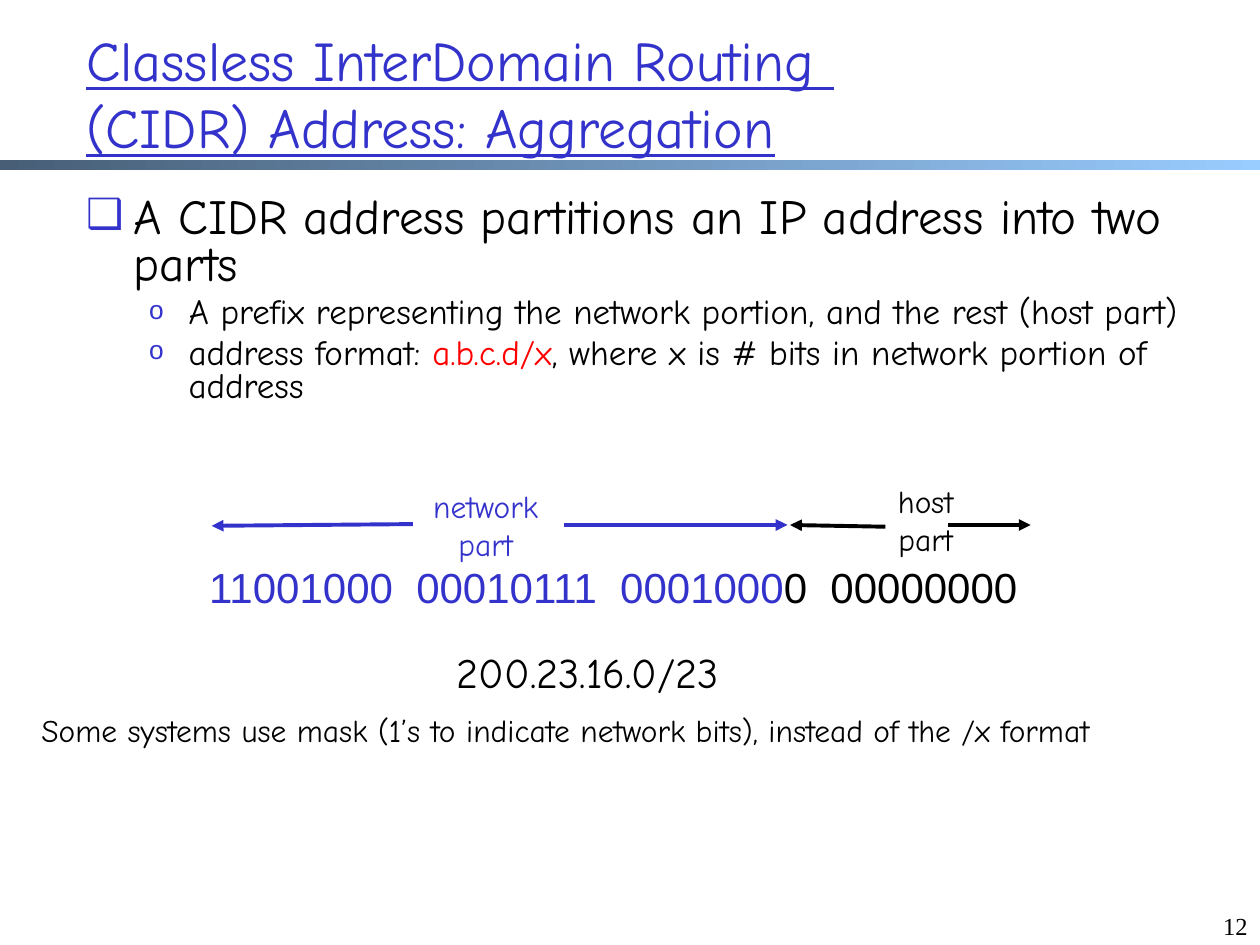
from lxml.etree import SubElement
from pptx import Presentation
from pptx.dml.color import RGBColor
from pptx.enum.shapes import MSO_CONNECTOR, MSO_SHAPE
from pptx.enum.text import MSO_ANCHOR, MSO_AUTO_SIZE, PP_ALIGN
from pptx.oxml.ns import qn
from pptx.util import Pt

COLOURS = {"blue": "3333CC", "black": "000000", "red": "FF0000",
           "bar_dark": "475E76", "bar_light": "99CCFF"}
BODY_FONT = "Comic Neue"
BULLETS = [
    {"char": "❑", "scale": 85, "size": 28, "left": 27, "hanging": 27, "before": 5.6},
    {"char": "o", "scale": 75, "size": 20, "left": 58.5, "hanging": 22.5, "before": 4},
]


def colour(name):
    return RGBColor.from_string(COLOURS[name])


def set_attributes(target, values):
    for name, value in values.items():
        setattr(target, name, value)


class SlideBuilder:
    """Holds the style and the current slide."""

    def __init__(self, slide):
        self.slide = slide
        self.shapes = slide.shapes

    def place(self, shape, left, top, width, height):
        set_attributes(shape, {"left": Pt(left), "top": Pt(top),
                               "width": Pt(width), "height": Pt(height)})

    def spans(self, para, parts, size, font=BODY_FONT, underline=None):
        """Add (text, colour name) parts; a newline becomes a line break."""
        for text, shade in parts:
            for number, line in enumerate(text.split("\n")):
                if number:
                    para.add_line_break()
                span = para.add_run()
                span.text = line
                set_attributes(span.font, {"size": Pt(size), "name": font,
                                           "underline": underline})
                span.font.color.rgb = colour(shade)

    def title(self, text, area):
        box = self.shapes.title
        self.place(box, *area)
        set_attributes(box.text_frame, {"vertical_anchor": MSO_ANCHOR.MIDDLE,
                                        "auto_size": MSO_AUTO_SIZE.NONE})
        para = box.text_frame.paragraphs[0]
        para.alignment = PP_ALIGN.LEFT
        self.spans(para, [(text, "blue")], 32, underline=True)

    def body(self, items, area):
        box = self.slide.placeholders[1]
        self.place(box, *area)
        frame = box.text_frame
        frame.auto_size = MSO_AUTO_SIZE.NONE
        for number, (level, parts) in enumerate(items):
            para = frame.add_paragraph() if number else frame.paragraphs[0]
            style = BULLETS[level]
            set_attributes(para, {"level": level, "line_spacing": 0.8,
                                  "space_before": Pt(style["before"])})
            self.bullet(para, style)
            self.spans(para, parts, style["size"])

    def bullet(self, para, style):
        props = para._p.get_or_add_pPr()
        props.set("marL", str(Pt(style["left"])))
        props.set("indent", str(-Pt(style["hanging"])))
        shade = SubElement(props, qn("a:buClr"))
        SubElement(shade, qn("a:srgbClr"), val=COLOURS["blue"])
        SubElement(props, qn("a:buSzPct"), val=str(style["scale"] * 1000))
        SubElement(props, qn("a:buFont"), typeface="Arial")
        SubElement(props, qn("a:buChar"), char=style["char"])

    def text(self, paragraphs, area, size, font=BODY_FONT, align=PP_ALIGN.LEFT):
        box = self.shapes.add_textbox(*(Pt(length) for length in area))
        frame = box.text_frame
        frame.word_wrap = False
        for number, parts in enumerate(paragraphs):
            para = frame.add_paragraph() if number else frame.paragraphs[0]
            para.alignment = align
            self.spans(para, parts, size, font)

    def arrow(self, start, end, shade):
        line = self.shapes.add_connector(
            MSO_CONNECTOR.STRAIGHT, *(Pt(length) for length in (*start, *end)))
        line.line.width = Pt(2.25)
        line.line.color.rgb = colour(shade)
        SubElement(line.line._get_or_add_ln(), qn("a:tailEnd"), type="triangle")
        SubElement(line._element.spPr, qn("a:effectLst"))

    def gradient_bar(self, area):
        bar = self.shapes.add_shape(MSO_SHAPE.RECTANGLE,
                                    *(Pt(length) for length in area))
        bar.shadow.inherit = False
        bar.line.fill.background()
        bar.fill.gradient()
        bar.fill.gradient_angle = 0
        ends = (("bar_dark", 0), ("bar_light", 1))
        for stop, (shade, position) in zip(bar.fill.gradient_stops, ends):
            stop.color.rgb = colour(shade)
            stop.position = position


def main():
    deck = Presentation()
    set_attributes(deck, {"slide_width": Pt(720), "slide_height": Pt(540)})
    page = SlideBuilder(deck.slides.add_slide(deck.slide_layouts[1]))

    page.gradient_bar((0, 91.5, 720, 5.75))
    page.text([[("12", "black")]], (686, 517, 34, 23), 14,
              "Times New Roman", PP_ALIGN.RIGHT)
    page.title("Classless InterDomain Routing \n(CIDR) Address: Aggregation",
               (42, 8, 632, 90))
    page.body([
        (0, [("A CIDR address partitions an IP address into two parts", "black")]),
        (1, [("A prefix representing the network portion, "
              "and the rest (host part)", "black")]),
        (1, [("address format: ", "black"), ("a.b.c.d/x", "red"),
             (", where x is # bits in network portion of address", "black")]),
    ], (42, 108.75, 639, 138))

    page.text([[("11001000  00010111  0001000", "blue"), ("0  00000000", "black")]],
              (112.5, 317.5, 482.5, 36), 24, "Arial")
    for name, shade, area in (("network", "blue", (236, 275, 83, 50.5)),
                              ("host", "black", (503, 272, 52, 50.5))):
        page.text([[(name, shade)], [("part", shade)]], area, 18,
                  align=PP_ALIGN.CENTER)
    for start, end, shade in (((322.5, 300), (450, 300), "blue"),
                              ((236, 299.5), (121, 300.5), "blue"),
                              ((506, 301), (451.5, 300), "black"),
                              ((542, 300), (589, 300), "black")):
        page.arrow(start, end, shade)

    page.text([[("200.23.16.0/23", "black")]], (254, 366, 187, 36), 24)
    page.text([[("Some systems use mask (1’s to indicate network bits), "
                 "instead of the /x format", "black")]], (16.5, 403, 686, 29), 18)
    deck.save("out.pptx")


if __name__ == "__main__":
    main()
